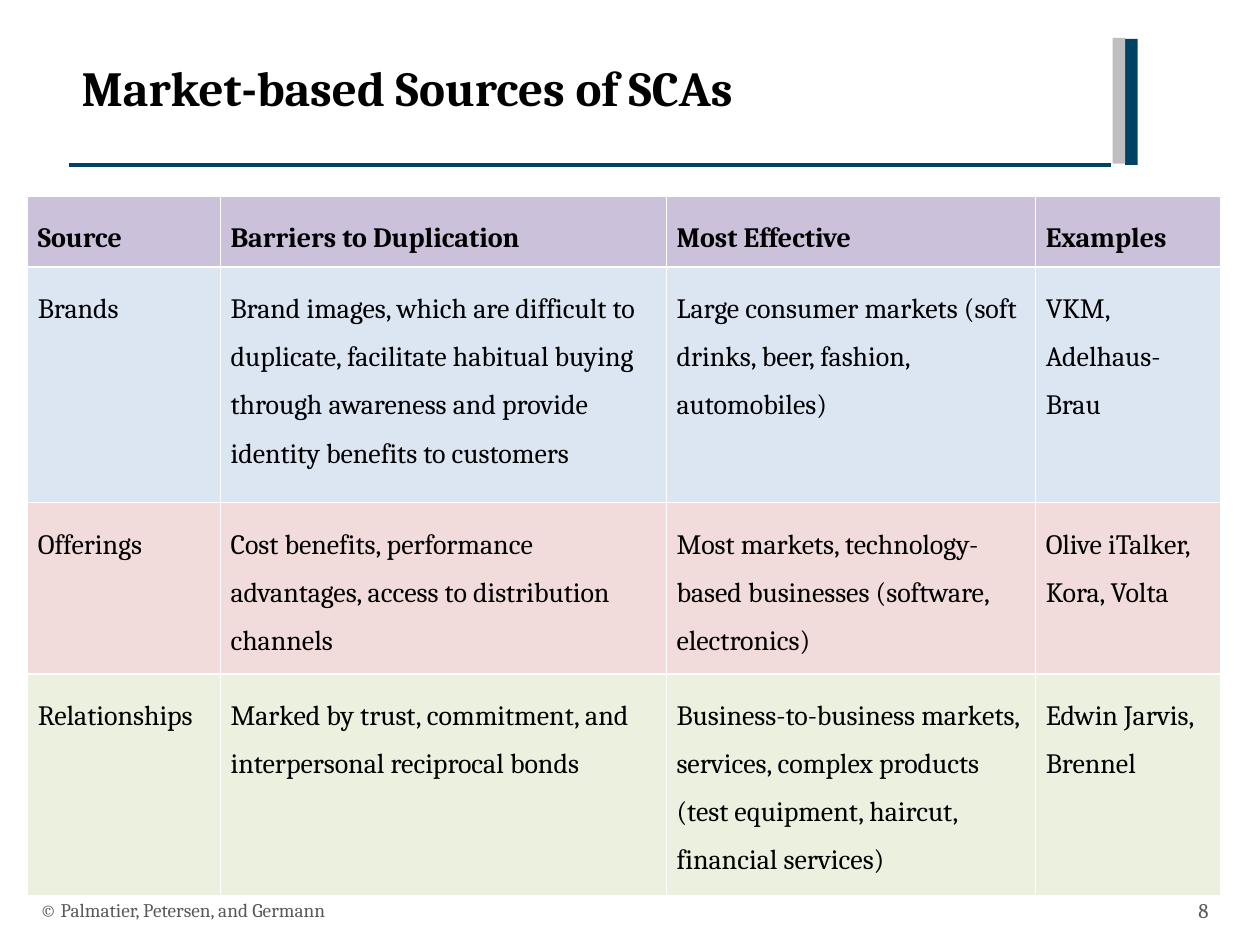
"""Builds a slide with a table of market-based sources of advantage."""
from dataclasses import dataclass

from lxml.etree import SubElement
from pptx import Presentation
from pptx.dml.color import RGBColor
from pptx.enum.shapes import MSO_CONNECTOR, MSO_SHAPE
from pptx.enum.text import MSO_ANCHOR, PP_ALIGN
from pptx.oxml import parse_xml
from pptx.oxml.ns import nsdecls, qn
from pptx.util import Inches, Pt


@dataclass(frozen=True)
class Theme:
    face: str = "Cambria"
    ink: str = "000000"
    muted: str = "595959"
    navy: str = "004264"
    gray: str = "BFBFBF"
    edge: str = "FFFFFF"
    bands: tuple = ("CCC1DA", "DCE6F2", "F2DCDB", "EBF1DE")
    title: int = 28
    body: int = 16
    note: int = 11
    page: int = 12


class Board:
    def __init__(self, slide, theme):
        self.slide = slide
        self.theme = theme

    def style(self, para, size, color, bold=False):
        font = para.font
        font.name = self.theme.face
        font.size = Pt(size)
        font.bold = bold
        font.color.rgb = RGBColor.from_string(color)

    def text(self, box, words, size, color, bold=False,
             anchor=MSO_ANCHOR.MIDDLE, align=PP_ALIGN.LEFT):
        frame = self.slide.shapes.add_textbox(*map(Inches, box)).text_frame
        frame.word_wrap = True
        frame.vertical_anchor = anchor
        para = frame.paragraphs[0]
        para.text = words
        para.alignment = align
        self.style(para, size, color, bold)

    def bar(self, box, color):
        shape = self.slide.shapes.add_shape(MSO_SHAPE.RECTANGLE, *map(Inches, box))
        shape.shadow.inherit = False
        shape.fill.solid()
        shape.fill.fore_color.rgb = RGBColor.from_string(color)
        shape.line.fill.background()

    def rule(self, ends, color, width):
        line = self.slide.shapes.add_connector(MSO_CONNECTOR.STRAIGHT, *map(Inches, ends))
        line.line.color.rgb = RGBColor.from_string(color)
        line.line.width = Pt(width)
        SubElement(line._element.spPr, qn("a:effectLst"))

    def border(self, cell):
        props = cell._tc.get_or_add_tcPr()
        for spot, side in enumerate(("lnL", "lnR", "lnT", "lnB")):
            props.insert(spot, parse_xml(
                f'<a:{side} {nsdecls("a")} w="{Pt(1)}"><a:solidFill>'
                f'<a:srgbClr val="{self.theme.edge}"/></a:solidFill></a:{side}>'))

    def cell(self, cell, words, fill, bold):
        cell.fill.solid()
        cell.fill.fore_color.rgb = RGBColor.from_string(fill)
        cell.margin_left = cell.margin_right = Inches(0.08)
        cell.margin_top = cell.margin_bottom = Inches(0.08)
        para = cell.text_frame.paragraphs[0]
        para.text = words
        para.line_spacing = 1.5
        self.style(para, self.theme.body, self.theme.ink, bold)
        self.border(cell)

    def table(self, left, top, widths, heights, rows):
        box = map(Inches, (left, top, sum(widths), sum(heights)))
        grid = self.slide.shapes.add_table(len(rows), len(widths), *box).table
        for col, width in zip(grid.columns, widths):
            col.width = Inches(width)
        for r, (row, height) in enumerate(zip(rows, heights)):
            grid.rows[r].height = Inches(height)
            for c, words in enumerate(row):
                self.cell(grid.cell(r, c), words, self.theme.bands[r], r == 0)


ROWS = (
    ("Source", "Barriers to Duplication", "Most Effective", "Examples"),
    ("Brands",
     "Brand images, which are difficult to duplicate, facilitate habitual buying "
     "through awareness and provide identity benefits to customers",
     "Large consumer markets (soft drinks, beer, fashion, automobiles)",
     "VKM, Adelhaus-Brau"),
    ("Offerings",
     "Cost benefits, performance advantages, access to distribution channels",
     "Most markets, technology-based businesses (software, electronics)",
     "Olive iTalker, Kora, Volta"),
    ("Relationships",
     "Marked by trust, commitment, and interpersonal reciprocal bonds",
     "Business-to-business markets, services, complex products "
     "(test equipment, haircut, financial services)",
     "Edwin Jarvis, Brennel"),
)


def main():
    deck = Presentation()
    deck.slide_width, deck.slide_height = Inches(10), Inches(7.5)
    theme = Theme()
    board = Board(deck.slides.add_slide(deck.slide_layouts[6]), theme)
    board.rule((0.55, 1.31, 8.82, 1.31), theme.navy, 2)
    board.bar((8.93, 0.31, 0.1, 1), theme.navy)
    board.bar((8.83, 0.3, 0.1, 1), theme.gray)
    board.text((0.55, 0.41, 8.26, 0.88), "Market-based Sources of SCAs",
               theme.title, theme.ink, bold=True, anchor=MSO_ANCHOR.TOP)
    board.text((0.22, 7.02, 6.7, 0.4), "© Palmatier, Petersen, and Germann",
               theme.note, theme.muted)
    board.text((9.08, 7.02, 0.61, 0.4), "8", theme.page, theme.muted,
               align=PP_ALIGN.RIGHT)
    board.table(0.22, 1.56, (1.53, 3.54, 2.93, 1.47), (0.48, 1.87, 1.18, 1.52), ROWS)
    deck.save("out.pptx")


if __name__ == "__main__":
    main()
